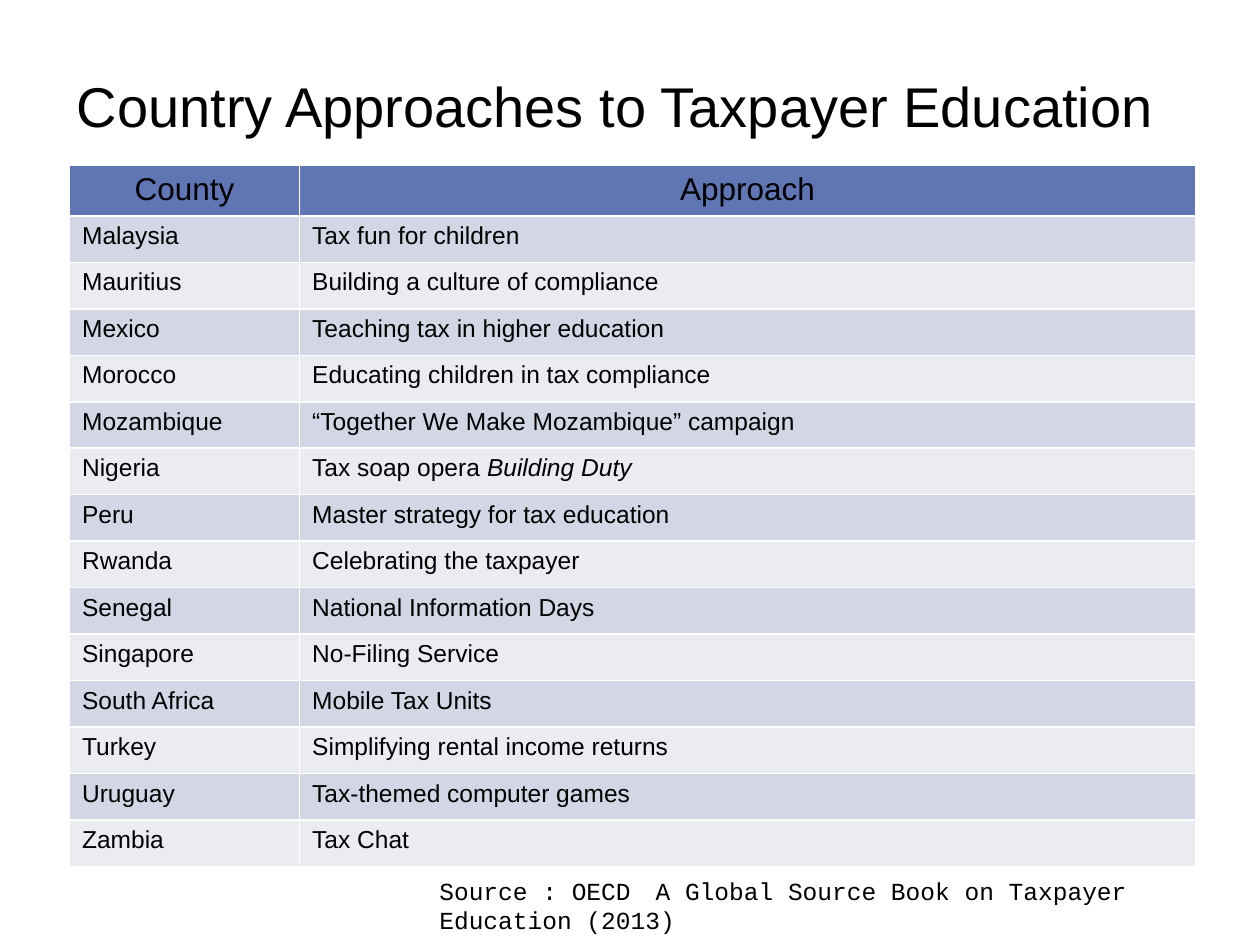
from pptx import Presentation
from pptx.dml.color import RGBColor
from pptx.enum import text as t
from pptx.util import Pt

HUES = {"ink": "000000", "head": "6076B4", "odd": "D2D6E5", "even": "EAECF2"}
HEADS = ["County", "Approach"]
ROWS = [
    ("Malaysia", "Tax fun for children"),
    ("Mauritius", "Building a culture of compliance"),
    ("Mexico", "Teaching tax in higher education"),
    ("Morocco", "Educating children in tax compliance"),
    ("Mozambique", "“Together We Make Mozambique” campaign"),
    ("Nigeria", "Tax soap opera ", "Building Duty"),
    ("Peru", "Master strategy for tax education"),
    ("Rwanda", "Celebrating the taxpayer"),
    ("Senegal", "National Information Days"),
    ("Singapore", "No-Filing Service"),
    ("South Africa", "Mobile Tax Units"),
    ("Turkey", "Simplifying rental income returns"),
    ("Uruguay", "Tax-themed computer games"),
    ("Zambia", "Tax Chat"),
]


def hue(name):
    return RGBColor.from_string(HUES[name])


def add_run(para, words, size, face="Arial", slant=False):
    run = para.add_run()
    run.text = words
    font = run.font
    font.name, font.size = face, Pt(size)
    font.bold, font.italic = False, slant
    font.color.rgb = hue("ink")


def add_line(slide, box, words, size, face="Arial"):
    """A wrapped text box with one run."""
    frame = slide.shapes.add_textbox(*map(Pt, box)).text_frame
    frame.word_wrap = True
    frame.auto_size = t.MSO_AUTO_SIZE.SHAPE_TO_FIT_TEXT
    add_run(frame.paragraphs[0], words, size, face)


def fill_cell(cell, shade, size, parts, align=t.PP_ALIGN.LEFT):
    """Shade a cell; any part after the first is in italics."""
    cell.fill.solid()
    cell.fill.fore_color.rgb = hue(shade)
    para = cell.text_frame.paragraphs[0]
    para.alignment = align
    for i, part in enumerate(parts):
        add_run(para, part, size, slant=i > 0)


def add_grid(slide, box, first, top):
    """Country table: first column width and header height are given."""
    left, y, width, height = box
    grid = slide.shapes.add_table(
        len(ROWS) + 1, len(HEADS), *map(Pt, box)).table
    grid.columns[0].width = Pt(first)
    grid.columns[1].width = Pt(width - first)

    # Header
    grid.rows[0].height = Pt(top)
    for col, head in enumerate(HEADS):
        fill_cell(grid.cell(0, col), "head", 18, [head], t.PP_ALIGN.CENTER)

    # Banded body
    for n, (land, *plan) in enumerate(ROWS, 1):
        grid.rows[n].height = Pt((height - top) / len(ROWS))
        shade = "odd" if n % 2 else "even"
        fill_cell(grid.cell(n, 0), shade, 14, [land])
        fill_cell(grid.cell(n, 1), shade, 14, plan)


def main():
    deck = Presentation()
    deck.slide_width, deck.slide_height = Pt(720), Pt(540)
    slide = deck.slides.add_slide(deck.slide_layouts[6])

    # Source, title, table
    add_line(slide, (244, 497, 484.5, 24.5),
             "Source : OECD　A Global Source Book on Taxpayer Education (2013)",
             14, "Courier New")
    add_line(slide, (36.7, 37.4, 646.6, 46),
             "Country Approaches to Taxpayer Education", 32)
    add_grid(slide, (39.7, 94.5, 643.5, 400), 131.5, 28)
    deck.save("out.pptx")


if __name__ == "__main__":
    main()
